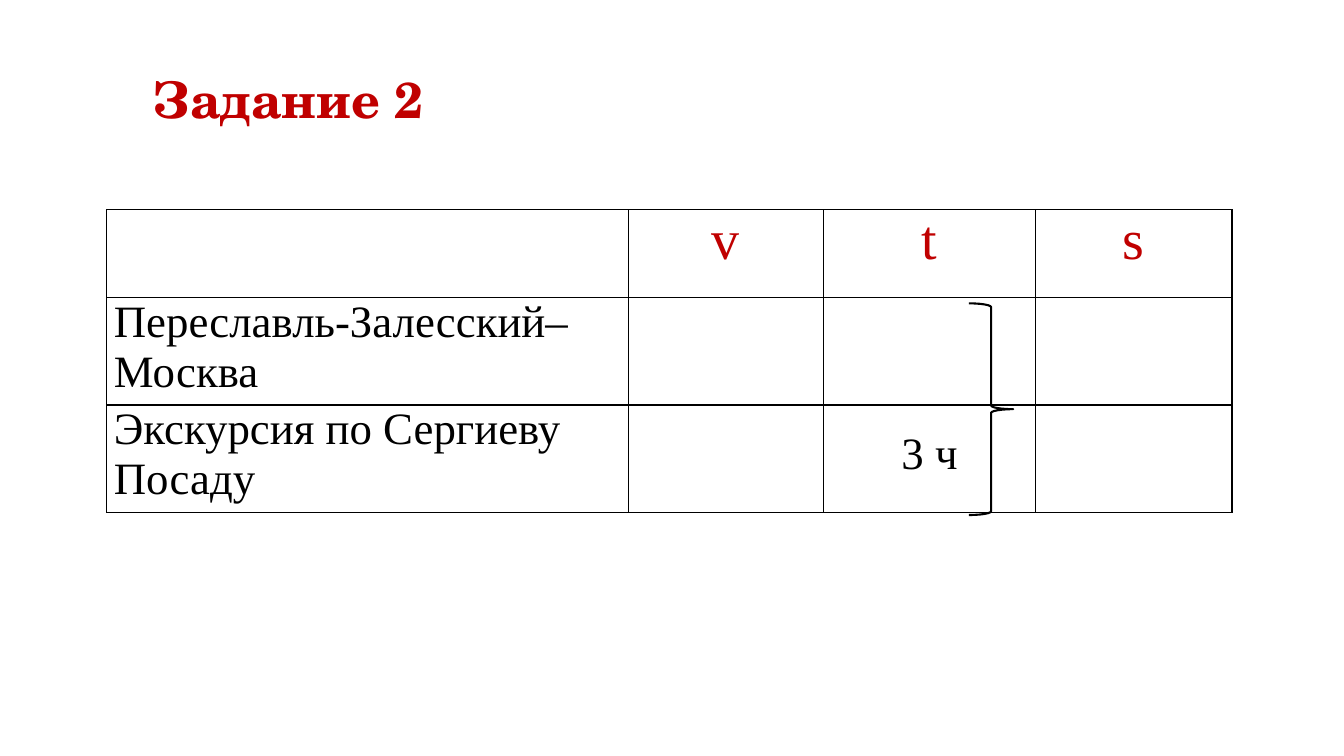
from dataclasses import dataclass

from lxml import etree
from pptx import Presentation
from pptx.dml.color import RGBColor
from pptx.enum.shapes import MSO_SHAPE
from pptx.enum.text import MSO_ANCHOR, MSO_AUTO_SIZE, PP_ALIGN
from pptx.oxml.ns import qn
from pptx.util import Inches, Pt

LEFT, CENTER = PP_ALIGN.LEFT, PP_ALIGN.CENTER
TOP = MSO_ANCHOR.TOP
FIT_SHAPE = MSO_AUTO_SIZE.SHAPE_TO_FIT_TEXT
RIGHT_BRACE = MSO_SHAPE.RIGHT_BRACE

RED, BLACK = "C00000", "000000"
TITLE_FONT, TABLE_FONT = "TeX Gyre Schola", "Times New Roman"
TABLE_LEFT, TABLE_TOP = 1.06, 2.08
COLUMNS = (5.17, 1.94, 2.1, 1.95)
ROW_HEIGHT, ROW_COUNT = 0.87, 3


@dataclass(frozen=True)
class CellText:
    row: int
    col: int
    text: str
    size: int = 32
    color: str = BLACK
    align: PP_ALIGN = CENTER
    space_after: int = 0
    line_spacing: float = 1.0


CELL_TEXTS = [
    *(CellText(0, col, name, 40, RED, space_after=24)
      for col, name in enumerate("vts", start=1)),
    CellText(1, 0, "Переславль-Залесский– Москва", align=LEFT),
    CellText(2, 0, "Экскурсия по Сергиеву Посаду", align=LEFT),
    CellText(2, 2, "3 ч", line_spacing=1.5),
]


def rgb(value: str) -> RGBColor:
    return RGBColor.from_string(value)


def set_font(font, name: str, size: int, color: str, bold: bool = False) -> None:
    font.name, font.size, font.bold = name, Pt(size), bold
    font.color.rgb = rgb(color)


def place(shape, left: float, top: float, width: float, height: float) -> None:
    shape.left, shape.top = Inches(left), Inches(top)
    shape.width, shape.height = Inches(width), Inches(height)


def format_cell(cell) -> None:
    cell.margin_left = cell.margin_right = Inches(0.07)
    cell.margin_top = cell.margin_bottom = 0
    cell.fill.background()
    tc_pr = cell._tc.get_or_add_tcPr()
    # Borders come before the fill in the cell properties
    for i, side in enumerate(("a:lnL", "a:lnR", "a:lnT", "a:lnB")):
        ln = etree.Element(qn(side), w=str(Pt(1)))
        fill = etree.SubElement(ln, qn("a:solidFill"))
        etree.SubElement(fill, qn("a:srgbClr"), val=BLACK)
        tc_pr.insert(i, ln)


def write_cell(table, item: CellText) -> None:
    p = table.cell(item.row, item.col).text_frame.paragraphs[0]
    p.text, p.alignment = item.text, item.align
    p.space_after, p.line_spacing = Pt(item.space_after), item.line_spacing
    set_font(p.font, TABLE_FONT, item.size, item.color)


def add_title(s) -> None:
    title = s.shapes.title
    place(title, 1.41, 0.63, 4.19, 0.71)
    tf = title.text_frame
    tf.text = "Задание 2"
    tf.word_wrap, tf.auto_size, tf.vertical_anchor = True, FIT_SHAPE, TOP
    p = tf.paragraphs[0]
    p.alignment = LEFT
    set_font(p.font, TITLE_FONT, 36, RED, bold=True)


def add_motion_table(s) -> None:
    table = s.shapes.add_table(
        ROW_COUNT, len(COLUMNS), Inches(TABLE_LEFT), Inches(TABLE_TOP),
        Inches(sum(COLUMNS)), Inches(ROW_COUNT * ROW_HEIGHT)).table
    table.first_row = table.horz_banding = False
    for column, width in zip(table.columns, COLUMNS):
        column.width = Inches(width)
    for row in table.rows:
        row.height = Inches(ROW_HEIGHT)
    for cell in table.iter_cells():
        format_cell(cell)
    for item in CELL_TEXTS:
        write_cell(table, item)


def add_time_brace(s) -> None:
    brace = s.shapes.add_shape(RIGHT_BRACE, 0, 0, 0, 0)
    place(brace, 9.61, 3.01, 0.44, 2.1)
    brace.shadow.inherit = False
    brace.fill.background()
    brace.line.color.rgb = rgb(BLACK)
    brace.line.width = Pt(1.5)


def main() -> None:
    prs = Presentation()
    prs.slide_width, prs.slide_height = Inches(13.33), Inches(7.5)
    s = prs.slides.add_slide(prs.slide_layouts[5])
    add_motion_table(s)
    add_title(s)
    add_time_brace(s)
    prs.save("out.pptx")


if __name__ == "__main__":
    main()
